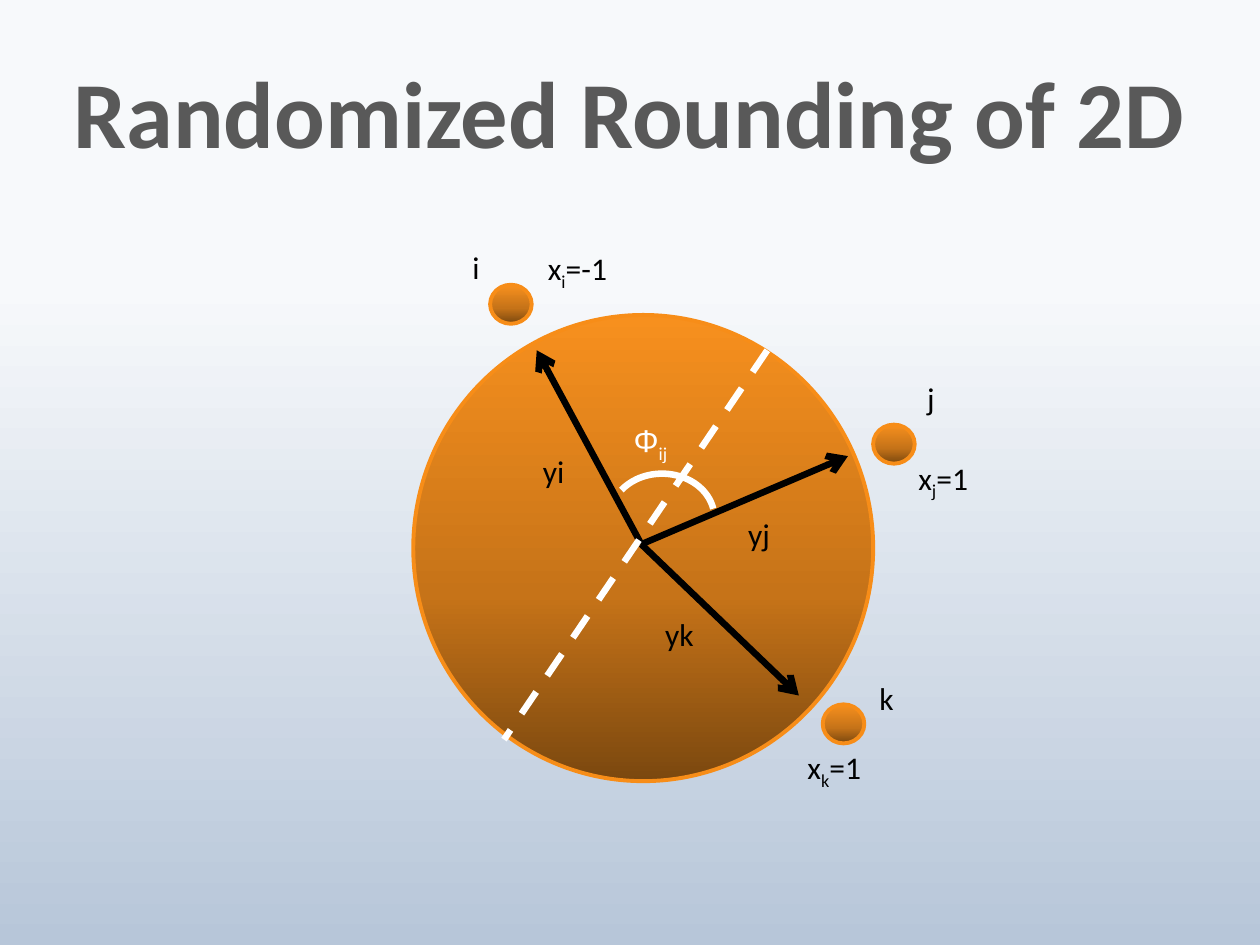
from dataclasses import dataclass

from lxml import etree
from pptx import Presentation
from pptx.dml.color import RGBColor
from pptx.enum.dml import MSO_LINE
from pptx.enum.shapes import MSO_CONNECTOR, MSO_SHAPE
from pptx.enum.text import MSO_ANCHOR, MSO_AUTO_SIZE, PP_ALIGN
from pptx.oxml.ns import qn
from pptx.util import Inches, Pt

OVAL, ARC = MSO_SHAPE.OVAL, MSO_SHAPE.ARC
STRAIGHT = MSO_CONNECTOR.STRAIGHT
DASH = MSO_LINE.DASH
MIDDLE, CENTER = MSO_ANCHOR.MIDDLE, PP_ALIGN.CENTER
FIT_SHAPE, NO_FIT = MSO_AUTO_SIZE.SHAPE_TO_FIT_TEXT, MSO_AUTO_SIZE.NONE


@dataclass(frozen=True)
class Theme:
    font: str = "Calibri"
    symbol_font: str = "Arial"
    title_size: int = 54
    title_spacing: int = 56
    label_size: int = 18
    outline: float = 2.25
    stroke: float = 3.75
    ink: str = "000000"
    light: str = "FFFFFF"
    rim: str = "F78D18"
    backdrop: tuple = ((30, "F7F9FB"), (100, "B7C6D9"))
    heading: tuple = ((50, "595959"), (100, "262626"))
    ball: tuple = ((0, "F7901E"), (60, "C67318"), (100, "7B480F"))


THEME = Theme()


@dataclass(frozen=True)
class Grid:
    left: int
    top: int
    width: int
    height: int
    cols: int
    rows: int

    def point(self, col, row):
        return (round(self.left + self.width * col / self.cols),
                round(self.top + self.height * row / self.rows))

    def area(self, col, row, cols, rows):
        return (*self.point(col, row),
                round(self.width * cols / self.cols),
                round(self.height * rows / self.rows))


def fill_down(fill, owner, stops):
    fill.gradient()
    fill.gradient_angle = 270
    stop_list = owner.find(".//" + qn("a:gsLst"))
    for old in list(stop_list):
        stop_list.remove(old)
    for position, color in stops:
        gs = etree.SubElement(stop_list, qn("a:gs"), pos=str(position * 1000))
        etree.SubElement(gs, qn("a:srgbClr"), val=color)


def set_line(line, color, width):
    line.color.rgb = RGBColor.from_string(color)
    line.width = Pt(width)


def add_ball(s, area):
    ball = s.shapes.add_shape(OVAL, *area)
    ball.shadow.inherit = False
    fill_down(ball.fill, ball.element, THEME.ball)
    set_line(ball.line, THEME.rim, THEME.outline)


def add_ray(s, start, end, color, arrow=False):
    ray = s.shapes.add_connector(STRAIGHT, *start, *end)
    set_line(ray.line, color, THEME.stroke)
    sp_pr = ray.element.spPr
    if arrow:
        etree.SubElement(sp_pr.find(qn("a:ln")), qn("a:tailEnd"), type="arrow")
    etree.SubElement(sp_pr, qn("a:effectLst"))
    return ray


def add_label(s, area, base, sub="", rest="", color=THEME.ink, font=THEME.font):
    box = s.shapes.add_textbox(*area)
    tf = box.text_frame
    tf.word_wrap = True
    tf.auto_size = FIT_SHAPE
    p = tf.paragraphs[0]
    for text, face, shift in ((base, font, 0), (sub, THEME.font, -25), (rest, THEME.font, 0)):
        if text:
            r = p.add_run()
            r.text = text
            r.font.name = face
            r.font.size = Pt(THEME.label_size)
            r.font.color.rgb = RGBColor.from_string(color)
            if shift:
                r.font._element.set("baseline", str(shift * 1000))


def add_title(s, grid):
    title = s.shapes.title
    title.left, title.top, title.width, title.height = grid.area(0, 0, 1, 1)
    tf = title.text_frame
    tf.auto_size = NO_FIT
    tf.vertical_anchor = MIDDLE
    p = tf.paragraphs[0]
    p.alignment = CENTER
    p.line_spacing = Pt(THEME.title_spacing)
    r = p.add_run()
    r.text = "Randomized Rounding of 2D"
    r.font.name = THEME.font
    r.font.size = Pt(THEME.title_size)
    r.font.bold = True
    fill_down(r.font.fill, r.font._element, THEME.heading)


def add_circle(s, grid):
    center = grid.point(20.9, 28.2)
    add_ball(s, grid.area(2.8, 10, 36.5, 37))

    vectors = (
        ("yi", (12.6, 12.8), (12.1, 20.4, 5.8)),
        ("yj", (37.3, 21.2), (28.4, 25.4, 5)),
        ("yk", (33.4, 40.2), (21.8, 33.3, 5)),
    )
    for name, tip, (col, row, cols) in vectors:
        add_ray(s, center, grid.point(*tip), THEME.ink, arrow=True)
        add_label(s, grid.area(col, row, cols, 4), name)

    angle = s.shapes.add_shape(ARC, *grid.area(18.4, 22.6, 8.3, 7))
    angle.shadow.inherit = False
    angle.adjustments[0], angle.adjustments[1] = 128.54, 209.93
    angle.fill.background()
    set_line(angle.line, THEME.light, THEME.stroke)

    cut = add_ray(s, grid.point(30.9, 12.8), grid.point(10, 43.7), THEME.light)
    cut.line.dash_style = DASH
    add_label(s, grid.area(19.3, 17.9, 6.2, 4), "Φ", "ij",
              color=THEME.light, font=THEME.symbol_font)


def add_vertices(s, grid):
    vertices = (
        ("i", "=-1", (8.9, 7.6), (6.5, 4.2), (12.5, 4.3)),
        ("j", "=1", (39.3, 18.7), (42.6, 14.6), (41.9, 20.9)),
        ("k", "=1", (35.3, 40.9), (38.8, 38.4), (33.1, 43.9)),
    )
    for name, value, dot, label, assignment in vertices:
        add_ball(s, grid.area(*dot, 3.3, 3.1))
        add_label(s, grid.area(*label, 4.1, 4), name)
        add_label(s, grid.area(*assignment, 10.3, 4), "x", name, value)


def main():
    prs = Presentation()
    prs.slide_width, prs.slide_height = Inches(10), Inches(7.5)
    s = prs.slides.add_slide(prs.slide_layouts[5])
    fill_down(s.background.fill, s.element, THEME.backdrop)
    add_title(s, Grid(Inches(0.22), Inches(0.25), Inches(9.55), Inches(1.38), 1, 1))
    diagram = Grid(Inches(3), Inches(1.5), Inches(5.5), Inches(5), 55, 50)
    add_circle(s, diagram)
    add_vertices(s, diagram)
    prs.save("out.pptx")


if __name__ == "__main__":
    main()
